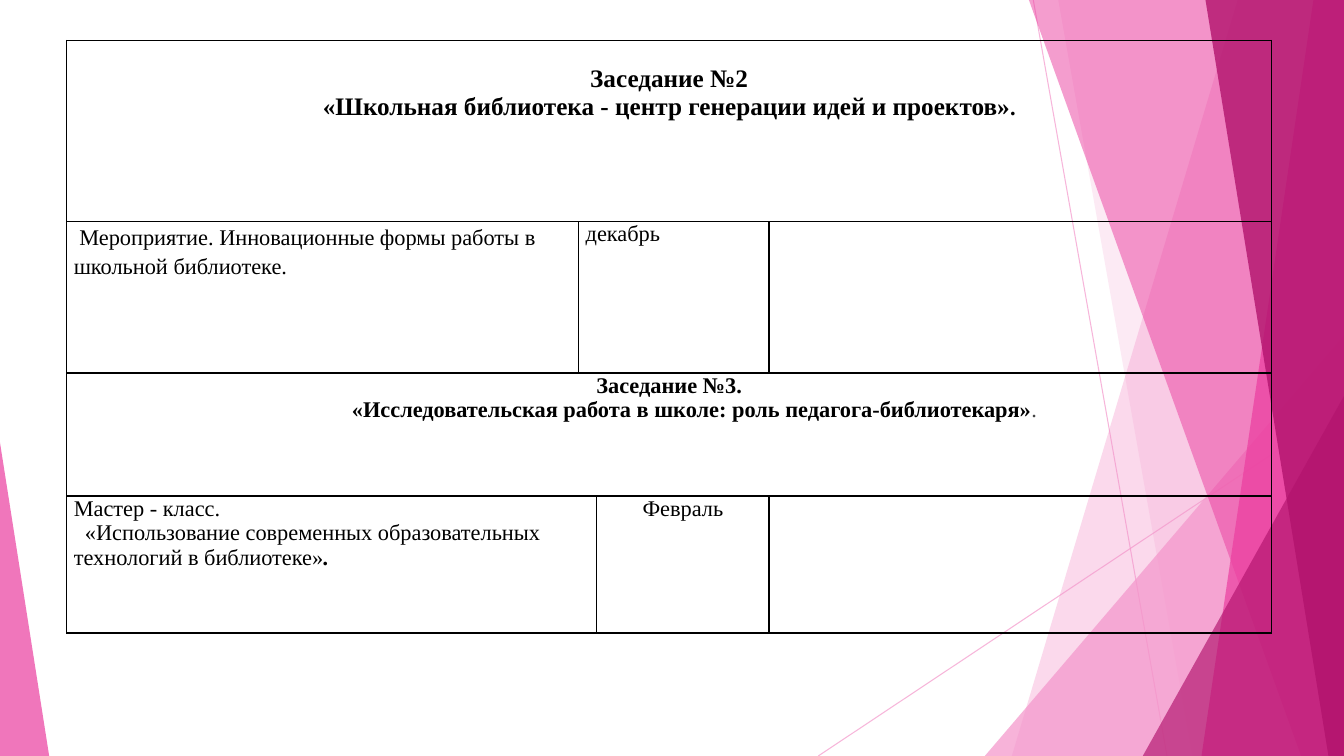
from lxml.etree import SubElement
from pptx import Presentation
from pptx.dml.color import RGBColor
from pptx.enum.shapes import MSO_CONNECTOR, MSO_SHAPE
from pptx.enum.text import PP_ALIGN
from pptx.oxml.ns import qn
from pptx.util import Cm, Pt

BLACK = RGBColor(0, 0, 0)
GREY = RGBColor(0x44, 0x44, 0x44)
LIGHT_PINK = RGBColor(0xF4, 0x96, 0xCB)
PINK = RGBColor(0xEB, 0x3D, 0x9F)
DARK_PINK = RGBColor(0xB2, 0x13, 0x6D)

WIDTH, HEIGHT = 33.87, 19.05

RAYS = [((26.04, 0), (29.41, HEIGHT)), ((WIDTH, 10.24), (20.62, HEIGHT))]
FACETS = [
    ("band", 31.19, 25.5, LIGHT_PINK, 36),
    ("band", 26.67, 30.05, LIGHT_PINK, 20),
    ("triangle", 24.82, 8.46, LIGHT_PINK, 72),
    ("band", 25.93, 32.79, PINK, 50),
    ("band", 33.1, 30.28, PINK, 70),
    ("band", 30.38, 33.48, DARK_PINK, 80),
    ("triangle", 28.8, 9.98, DARK_PINK, 66),
]
LEFT_WEDGE = (1.24, 11.15)

TABLE_LEFT, TABLE_TOP = 1.68, 1.02
COLUMNS = [12.9, 0.46, 4.34, 12.67]
ROWS = [4.57, 3.81, 3.1, 3.45]
SIDE_MARGIN, TITLE_MARGIN = 0.18, 0.62

CENTER = {"alignment": PP_ALIGN.CENTER}
BOLD = {"bold": True}
TITLE = {"bold": True, "size": Pt(18)}
CELLS = [
    (0, 0, 4, [
        (CENTER, {}, [("Заседание №2", TITLE)]),
        (CENTER, {}, [("«Школьная библиотека - центр генерации идей и проектов»", TITLE),
                      (".", BOLD)]),
    ]),
    (1, 0, 1, [
        ({"line_spacing": 1.15}, {"indent": 0.14},
         [("Мероприятие. Инновационные формы работы в школьной библиотеке.", {})]),
    ]),
    (1, 1, 2, [({}, {}, [("декабрь", {})])]),
    (2, 0, 4, [
        (CENTER, {}, [("Заседание №3.", BOLD)]),
        (CENTER, {"marL": 1.27},
         [("«Исследовательская работа в школе: роль педагога-библиотекаря»", BOLD),
          (".", {"color": GREY})]),
    ]),
    (3, 0, 2, [
        ({}, {}, [("Мастер - класс.", {})]),
        ({}, {"indent": 0.28},
         [("«Использование современных образовательных технологий в библиотеке»", {}),
          (".", {"bold": True, "italic": True})]),
    ]),
    (3, 2, 1, [(CENTER, {}, [("Февраль", {})])]),
]


def set_alpha(fill_parent, percent):
    color = next(fill_parent.iter(qn("a:srgbClr")))
    SubElement(color, qn("a:alpha"), val=str(percent * 1000))


def paint(shape, color, percent):
    shape.shadow.inherit = False
    shape.fill.solid()
    shape.fill.fore_color.rgb = color
    shape.line.fill.background()
    set_alpha(shape._element.spPr, percent)


def add_ray(page, start, end):
    ray = page.shapes.add_connector(
        MSO_CONNECTOR.STRAIGHT, *(Cm(value) for value in start + end))
    ray.line.color.rgb = LIGHT_PINK
    ray.line.width = Pt(0.75)
    set_alpha(ray._element.spPr, 70)
    SubElement(ray._element.spPr, qn("a:effectLst"))


def add_band(page, top_x, bottom_x):
    corners = [(WIDTH, 0), (WIDTH, HEIGHT), (bottom_x, HEIGHT)]
    builder = page.shapes.build_freeform(Cm(top_x), 0)
    builder.add_line_segments([(Cm(x), Cm(y)) for x, y in corners], close=True)
    return builder.convert_to_shape()


def add_triangle(page, left, top, width, apex):
    triangle = page.shapes.add_shape(
        MSO_SHAPE.ISOSCELES_TRIANGLE, Cm(left), Cm(top), Cm(width), Cm(HEIGHT - top))
    triangle.adjustments[0] = apex
    return triangle


def add_decoration(page):
    for start, end in RAYS:
        add_ray(page, start, end)
    for kind, first, second, color, percent in FACETS:
        if kind == "band":
            facet = add_band(page, first, second)
        else:
            facet = add_triangle(page, first, second, WIDTH - first, 1)
        paint(facet, color, percent)
    width, top = LEFT_WEDGE
    paint(add_triangle(page, 0, top, width, 0), PINK, 70)


def frame_cell(cell):
    properties = cell._tc.get_or_add_tcPr()
    for side in ("lnL", "lnR", "lnT", "lnB"):
        border = SubElement(properties, qn(f"a:{side}"), w=str(Pt(1)))
        solid = SubElement(border, qn("a:solidFill"))
        SubElement(solid, qn("a:srgbClr"), val=str(BLACK))
    cell.fill.background()
    cell.margin_left = cell.margin_right = Cm(SIDE_MARGIN)
    cell.margin_top = cell.margin_bottom = 0


def write_cell(cell, paragraphs):
    frame = cell.text_frame
    for index, (layout, indents, spans) in enumerate(paragraphs):
        para = frame.add_paragraph() if index else frame.paragraphs[0]
        for name, value in layout.items():
            setattr(para, name, value)
        for name, value in indents.items():
            para._p.get_or_add_pPr().set(name, str(Cm(value)))
        for text, changes in spans:
            span = para.add_run()
            span.text = text
            style = {"name": "Times New Roman", "size": Pt(16), "bold": False,
                     "color": BLACK} | changes
            span.font.color.rgb = style.pop("color")
            for name, value in style.items():
                setattr(span.font, name, value)


def add_plan(page):
    table = page.shapes.add_table(
        len(ROWS), len(COLUMNS), Cm(TABLE_LEFT), Cm(TABLE_TOP),
        Cm(sum(COLUMNS)), Cm(sum(ROWS))).table
    table.first_row = table.horz_banding = False
    for column, width in zip(table.columns, COLUMNS):
        column.width = Cm(width)
    for row, height in zip(table.rows, ROWS):
        row.height = Cm(height)
    for cell in table.iter_cells():
        frame_cell(cell)
    for row, column, reach, paragraphs in CELLS:
        cell = table.cell(row, column)
        if reach > 1:
            cell.merge(table.cell(row, column + reach - 1))
        write_cell(cell, paragraphs)
    table.cell(0, 0).margin_top = Cm(TITLE_MARGIN)


def main():
    deck = Presentation()
    deck.slide_width, deck.slide_height = Cm(WIDTH), Cm(HEIGHT)
    page = deck.slides.add_slide(deck.slide_layouts[6])
    add_decoration(page)
    add_plan(page)
    deck.save("out.pptx")


if __name__ == "__main__":
    main()
